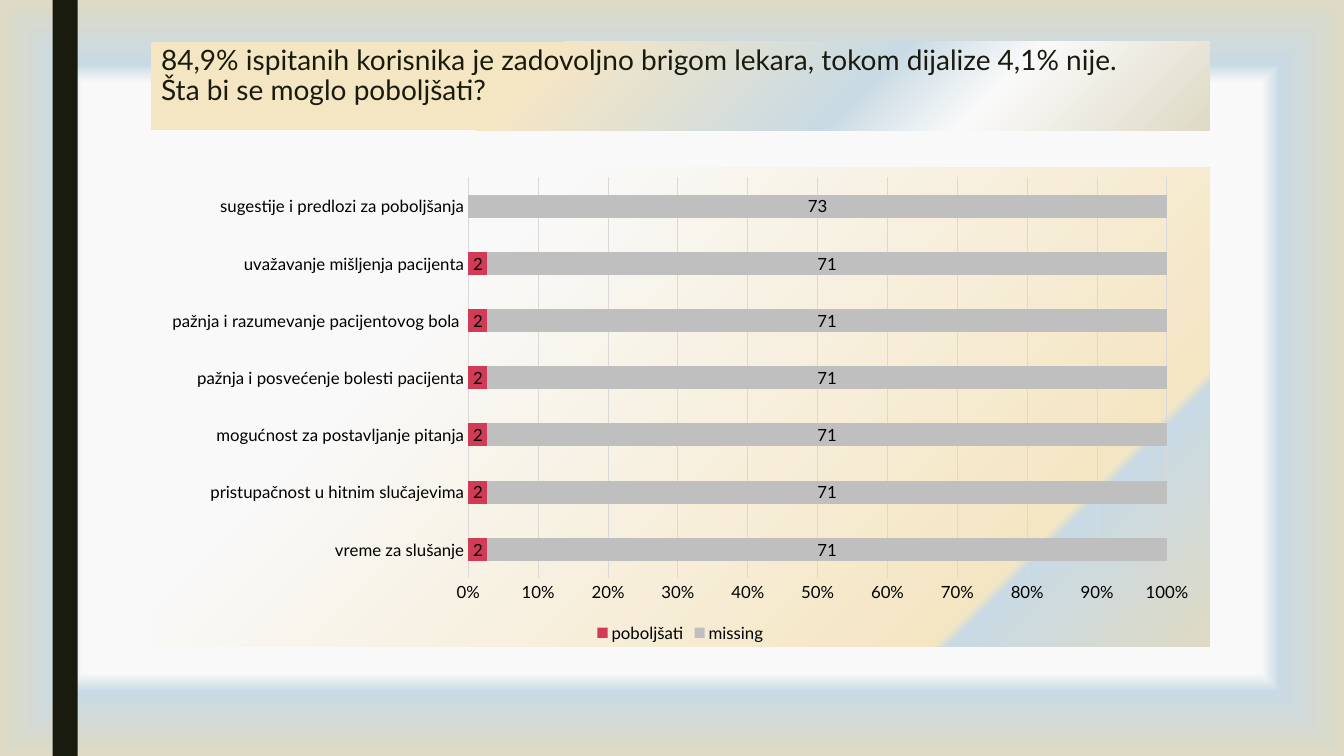
import lxml.etree
import pptx
import pptx.chart.data
import pptx.dml.color
import pptx.enum.chart
import pptx.enum.dml
import pptx.enum.shapes
import pptx.enum.text
import pptx.oxml.ns
import pptx.util

RGB = pptx.dml.color.RGBColor
BLACK = RGB(0, 0, 0)
DARK = RGB(0x19, 0x1B, 0x0E)
WHITE = RGB(0xF9, 0xF9, 0xF9)
BLUE = RGB(0xC9, 0xDA, 0xE4)
SAND = RGB(0xDE, 0xDA, 0xC5)
CREAM = RGB(0xF5, 0xE6, 0xC3)
RED = RGB(0xD1, 0x3B, 0x56)
GRAY = RGB(0xBF, 0xBF, 0xBF)
LINE = RGB(0xD9, 0xD9, 0xD9)

TITLE = ("84,9% ispitanih korisnika je zadovoljno brigom lekara, "
         "tokom dijalize 4,1% nije.\vŠta bi se moglo poboljšati?")
TOPICS = [
    "vreme za slušanje",
    "pristupačnost u hitnim slučajevima",
    "mogućnost za postavljanje pitanja",
    "pažnja i posvećenje bolesti pacijenta",
    "pažnja i razumevanje pacijentovog bola ",
    "uvažavanje mišljenja pacijenta",
    "sugestije i predlozi za poboljšanja",
]
SERIES = [
    ("poboljšati", [2] * 6 + [None], RED),
    ("missing", [71] * 6 + [73], GRAY),
]


def assign(item, form):
    for name, value in form.items():
        setattr(item, name, value)


def node(up, tag, **attrs):
    item = lxml.etree.SubElement(up, pptx.oxml.ns.qn(tag))
    for name, value in attrs.items():
        item.set(name, str(value))
    return item


def blend(up, stops, angle=None):
    """Add a gradient fill: linear with an angle, else from the centre out."""
    grad = node(up, "a:gradFill", rotWithShape=1)
    row = node(grad, "a:gsLst")
    for pos, color in stops:
        node(node(row, "a:gs", pos=pos * 1000), "a:srgbClr", val=color)
    if angle is None:
        way = node(grad, "a:path", path="shape")
        node(way, "a:fillToRect", l=50000, t=50000, r=50000, b=50000)
    else:
        node(grad, "a:lin", ang=angle * 60000, scaled=0)
    return grad


class Page:
    """The slide, on a grid of 160 columns by 90 rows."""
    cols, rows = 160, 90
    face = "Lato"

    def __init__(self, deck):
        self.wide = deck.slide_width / self.cols
        self.high = deck.slide_height / self.rows
        self.slide = deck.slides.add_slide(deck.slide_layouts[6])

    def area(self, col, row, cols, rows):
        return [round(n) for n in (col * self.wide, row * self.high,
                                   cols * self.wide, rows * self.high)]

    def style(self, font, size, color=BLACK):
        assign(font, {"name": self.face, "size": pptx.util.Pt(size)})
        font.color.rgb = color

    def backdrop(self, stops):
        self.slide.background.fill.solid()
        props = self.slide.element.find(".//" + pptx.oxml.ns.qn("p:bgPr"))
        props.replace(props[0], blend(props, stops))

    def block(self, spot, color):
        box = self.slide.shapes.add_shape(
            pptx.enum.shapes.MSO_SHAPE.RECTANGLE, *self.area(*spot))
        box.shadow.inherit = False
        box.line.fill.background()
        box.fill.solid()
        box.fill.fore_color.rgb = color
        return box

    def banner(self, spot, text, stops):
        box = self.block(spot, CREAM)
        props = box.element.spPr
        flat = props.find(pptx.oxml.ns.qn("a:solidFill"))
        props.replace(flat, blend(props, stops, 45))
        assign(box.text_frame, {
            "word_wrap": True,
            "vertical_anchor": pptx.enum.text.MSO_ANCHOR.TOP})
        par = box.text_frame.paragraphs[0]
        par.text = text
        assign(par, {"alignment": pptx.enum.text.PP_ALIGN.LEFT,
                     "line_spacing": 0.89})
        for run in par.runs:
            self.style(run.font, 20, DARK)

    def bars(self, spot, topics, series, stops):
        kinds = pptx.enum.chart
        data = pptx.chart.data.CategoryChartData()
        data.categories = topics
        for name, values, _ in series:
            data.add_series(name, values)
        chart = self.slide.shapes.add_chart(
            kinds.XL_CHART_TYPE.BAR_STACKED_100, *self.area(*spot), data).chart
        assign(chart, {"has_title": False, "has_legend": True})
        self.style(chart.font, 10)

        # Legend
        assign(chart.legend, {"position": kinds.XL_LEGEND_POSITION.BOTTOM,
                              "include_in_layout": False})
        self.style(chart.legend.font, 12)

        # Axes
        for axis in (chart.category_axis, chart.value_axis):
            assign(axis, {"major_tick_mark": kinds.XL_TICK_MARK.NONE,
                          "minor_tick_mark": kinds.XL_TICK_MARK.NONE})
            self.style(axis.tick_labels.font, 12)
        scale = chart.value_axis
        assign(scale.tick_labels, {"number_format": "0%",
                                   "number_format_is_linked": False})
        scale.format.line.fill.background()
        scale.has_major_gridlines = True
        for line in (chart.category_axis.format.line,
                     scale.major_gridlines.format.line):
            line.width = pptx.util.Pt(0.75)
            line.color.rgb = LINE

        # Bars and their labels
        plot = chart.plots[0]
        assign(plot, {"gap_width": 150, "overlap": 100,
                      "vary_by_categories": False})
        for bar, (_, _, color) in zip(plot.series, series):
            bar.format.fill.solid()
            bar.format.fill.fore_color.rgb = color
            assign(bar.data_labels, {
                "show_value": True,
                "position": kinds.XL_LABEL_POSITION.CENTER})
            self.style(bar.data_labels.font, 12)

        # Chart area
        root = chart.element
        props = node(root, "c:spPr")
        blend(props, stops, 45)
        node(node(props, "a:ln"), "a:noFill")
        root.find(pptx.oxml.ns.qn("c:chart")).addnext(props)


def main():
    deck = pptx.Presentation()
    assign(deck, {"slide_width": pptx.util.Inches(13.33),
                  "slide_height": pptx.util.Inches(7.5)})
    page = Page(deck)

    # Background and side stripe
    page.backdrop([(78, WHITE), (83, BLUE), (100, SAND)])
    page.block((6.25, 0, 3, 90), DARK)

    # Title
    page.banner((18, 5, 126, 10.5), TITLE,
                [(3, CREAM), (36, CREAM), (66, BLUE), (78, WHITE), (100, SAND)])

    # Chart
    page.bars((18, 20, 126, 57), TOPICS, SERIES,
              [(8, WHITE), (27, WHITE), (82, CREAM), (83, BLUE), (100, SAND)])
    deck.save("out.pptx")


if __name__ == "__main__":
    main()
